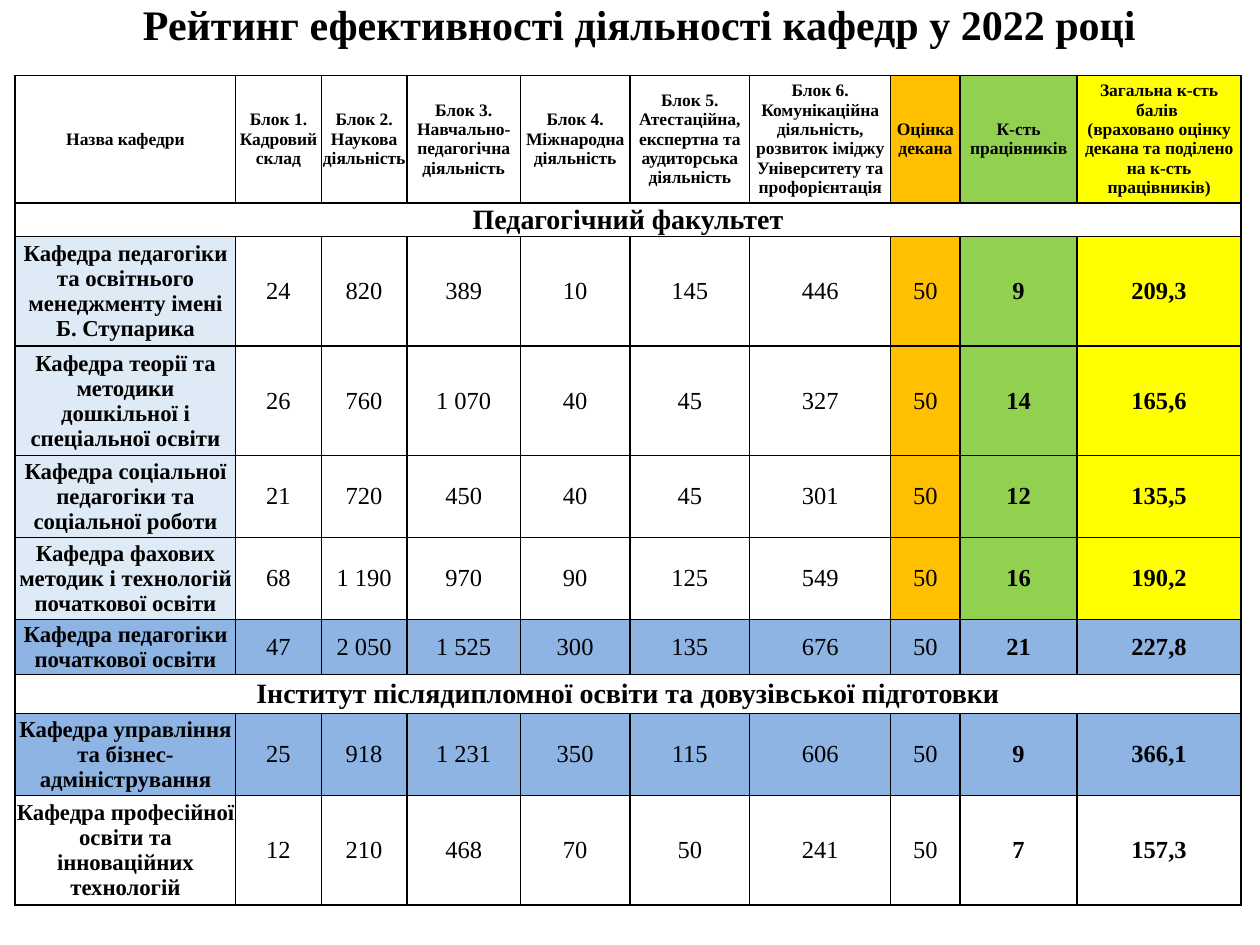
import pptx
import pptx.util
import pptx.dml.color
import pptx.enum.text
import pptx.oxml
import pptx.oxml.ns

Inches = pptx.util.Inches
Pt = pptx.util.Pt
RGBColor = pptx.dml.color.RGBColor

BLACK = RGBColor(0x00, 0x00, 0x00)
WHITE = RGBColor(0xFF, 0xFF, 0xFF)
ORANGE = RGBColor(0xFF, 0xC0, 0x00)
GREEN = RGBColor(0x92, 0xD0, 0x50)
YELLOW = RGBColor(0xFF, 0xFF, 0x00)
PALE = RGBColor(0xDE, 0xEA, 0xF6)
BLUE = RGBColor(0x8E, 0xB4, 0xE3)

# Fills of a whole row, column by column
MARKS = [ORANGE, GREEN, YELLOW]
HEAD = [WHITE] * 7 + MARKS
MIXED = [PALE] + [WHITE] * 6 + MARKS
BEST = [BLUE] * 10
PLAIN = [WHITE] * 10

COLS = [1.75, 0.68, 0.68, 0.9, 0.87, 0.95, 1.12, 0.55, 0.93, 1.3]

# Height, fills, texts; a row with one text is a section title
ROWS = [
    (1.01, HEAD, [
        "Назва кафедри",
        "Блок 1. Кадровий склад",
        "Блок 2. Наукова діяльність",
        "Блок 3. Навчально-педагогічна діяльність",
        "Блок 4. Міжнародна діяльність",
        "Блок 5. Атестаційна, експертна та аудиторська діяльність",
        "Блок 6. Комунікаційна діяльність, розвиток іміджу "
        "Університету та профорієнтація",
        "Оцінка декана",
        "К-сть працівників",
        "Загальна к-сть балів \n(враховано оцінку декана "
        "та поділено на к-сть працівників)"]),
    (0.26, PLAIN, ["Педагогічний факультет"]),
    (0.87, MIXED, ["Кафедра педагогіки та освітнього менеджменту імені Б. Ступарика",
                   "24", "820", "389", "10", "145", "446", "50", "9", "209,3"]),
    (0.87, MIXED, ["Кафедра теорії та методики дошкільної і спеціальної освіти",
                   "26", "760", "1 070", "40", "45", "327", "50", "14", "165,6"]),
    (0.65, MIXED, ["Кафедра соціальної педагогіки та соціальної роботи",
                   "21", "720", "450", "40", "45", "301", "50", "12", "135,5"]),
    (0.65, MIXED, ["Кафедра фахових методик і технологій початкової освіти",
                   "68", "1 190", "970", "90", "125", "549", "50", "16", "190,2"]),
    (0.43, BEST, ["Кафедра педагогіки початкової освіти",
                  "47", "2 050", "1 525", "300", "135", "676", "50", "21", "227,8"]),
    (0.31, PLAIN, ["Інститут післядипломної освіти та довузівської підготовки"]),
    (0.65, BEST, ["Кафедра управління та бізнес-адміністрування",
                  "25", "918", "1 231", "350", "115", "606", "50", "9", "366,1"]),
    (0.87, PLAIN, ["Кафедра професійної освіти та інноваційних технологій",
                   "12", "210", "468", "70", "50", "241", "50", "7", "157,3"]),
]


class Deck:
    font = "Times New Roman"
    ink = BLACK

    def __init__(self, prs):
        self.slide = prs.slides.add_slide(prs.slide_layouts[6])

    def label(self, frame, text, size, bold=True):
        para = frame.paragraphs[0]
        para.text = text
        para.alignment = pptx.enum.text.PP_ALIGN.CENTER
        for run in para.runs:
            run.font.name = self.font
            run.font.size = Pt(size)
            run.font.bold = bold
            run.font.color.rgb = self.ink

    def title(self, text, left, top, width, height):
        box = self.slide.shapes.add_textbox(
            Inches(left), Inches(top), Inches(width), Inches(height))
        box.text_frame.word_wrap = True
        self.label(box.text_frame, text, 24)

    def border(self, cell):
        props = cell._tc.get_or_add_tcPr()
        space = pptx.oxml.ns.nsdecls("a")
        for spot, side in enumerate(("lnL", "lnR", "lnT", "lnB")):
            props.insert(spot, pptx.oxml.parse_xml(
                f'<a:{side} {space} w="{Pt(1)}"><a:solidFill>'
                f'<a:srgbClr val="{self.ink}"/></a:solidFill></a:{side}>'))

    def paint(self, cell, fill):
        cell.fill.solid()
        cell.fill.fore_color.rgb = fill
        cell.margin_left = cell.margin_right = Inches(0.01)
        cell.margin_top = cell.margin_bottom = 0
        cell.vertical_anchor = pptx.enum.text.MSO_ANCHOR.MIDDLE
        self.border(cell)

    def table(self, left, top, cols, rows):
        high = sum(row[0] for row in rows)
        grid = self.slide.shapes.add_table(
            len(rows), len(cols), Inches(left), Inches(top),
            Inches(sum(cols)), Inches(high)).table
        grid.first_row = grid.horz_banding = False
        for col, width in zip(grid.columns, cols):
            col.width = Inches(width)
        for r, (height, fills, texts) in enumerate(rows):
            grid.rows[r].height = Inches(height)
            for c, fill in enumerate(fills):
                self.paint(grid.cell(r, c), fill)
            if len(texts) == 1:
                grid.cell(r, 0).merge(grid.cell(r, len(cols) - 1))
            for c, text in enumerate(texts):
                if r == 0:
                    size = 10
                elif len(texts) == 1:
                    size = 16
                else:
                    size = 14 if c else 13
                # Names and the last two columns are bold
                bold = r == 0 or c == 0 or c >= 8
                self.label(grid.cell(r, c).text_frame, text, size, bold)


def main():
    prs = pptx.Presentation()
    prs.slide_width = Inches(10)
    prs.slide_height = Inches(7.5)
    deck = Deck(prs)

    # Heading
    deck.title("Рейтинг ефективності діяльності кафедр у 2022 році",
               0.66, -0.06, 8.83, 0.5)

    # Ranking of departments
    deck.table(0.12, 0.6, COLS, ROWS)

    prs.save("out.pptx")


if __name__ == "__main__":
    main()
